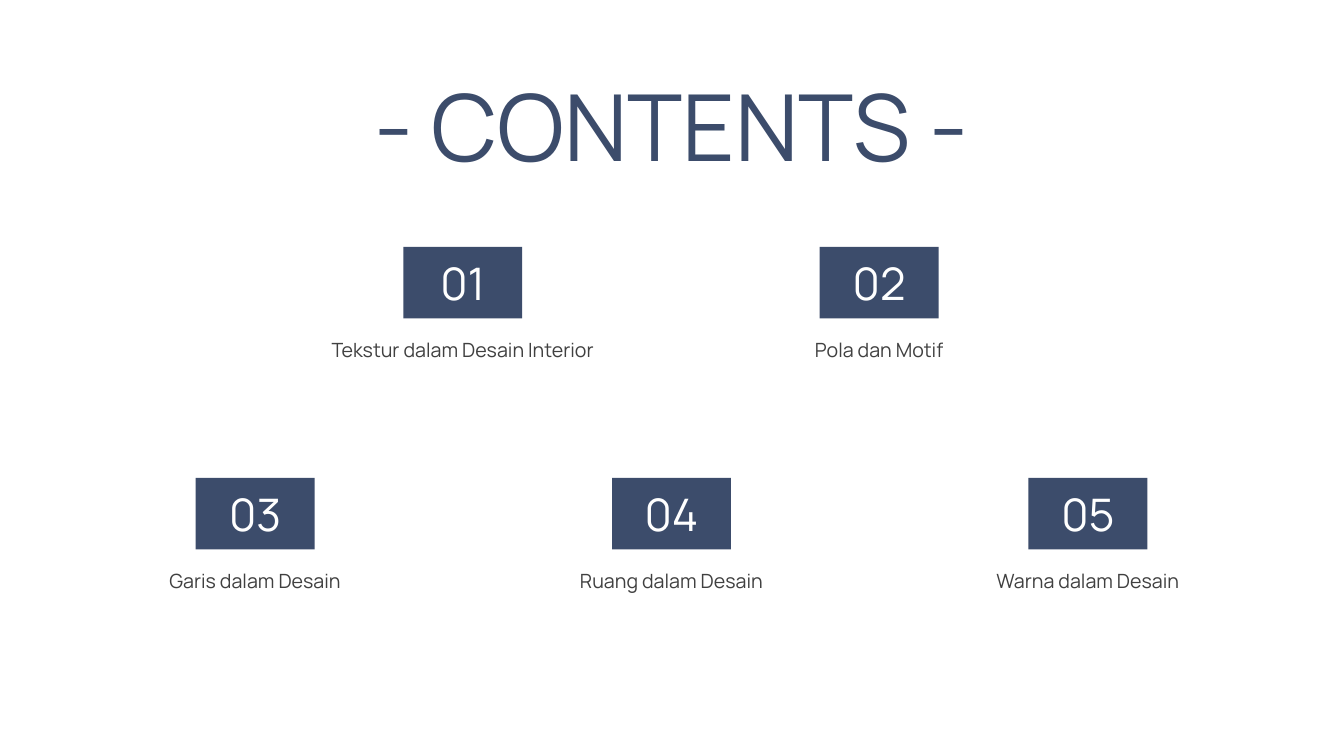
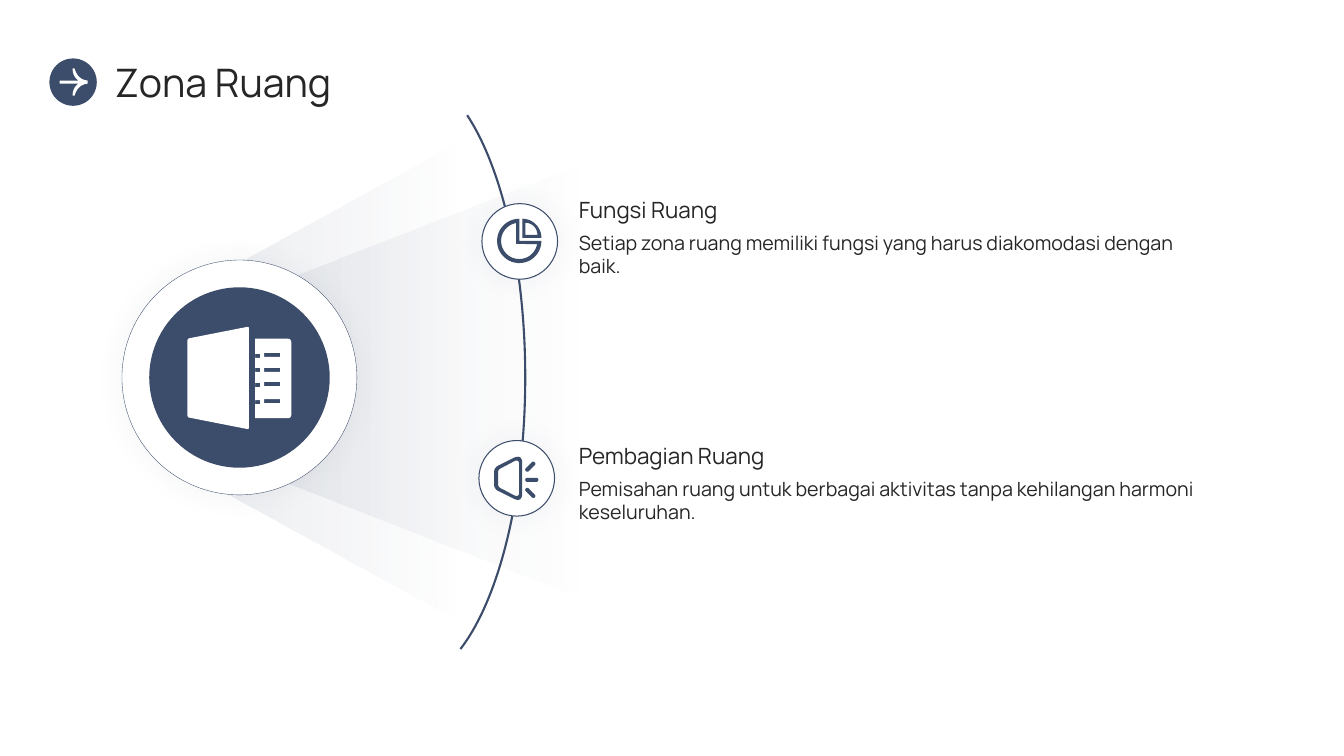
from dataclasses import dataclass
from itertools import count
from math import atan2, cos, degrees, dist, radians, sin

from pptx import Presentation
from pptx.dml.color import RGBColor
from pptx.enum.shapes import MSO_SHAPE as Preset
from pptx.enum.text import MSO_ANCHOR as Anchor, MSO_AUTO_SIZE as AutoSize, PP_ALIGN as Align
from pptx.oxml import parse_xml
from pptx.oxml.ns import nsdecls, qn
from pptx.shapes.autoshape import Shape
from pptx.slide import Slide
from pptx.util import Emu, Pt

EMU_PER_PX = 9144  # 100 px to the inch
FONT = "Manrope"
NAVY, WHITE, INK, GREY = "3C4C6B", "FFFFFF", "262626", "404040"
TITLE_ONLY = 5

Point = tuple[float, float]
Contour = list[Point]


@dataclass(frozen=True)
class Box:
    left: int
    top: int
    width: int
    height: int

    def emu(self) -> tuple[Emu, Emu, Emu, Emu]:
        return px(self.left), px(self.top), px(self.width), px(self.height)


@dataclass(frozen=True)
class TextStyle:
    size: int
    color: str
    align: Align = Align.LEFT
    anchor: Anchor = Anchor.TOP


@dataclass(frozen=True)
class Beam:
    box: Box
    inset: float


@dataclass(frozen=True)
class Zone:
    heading: str
    description: str
    top: int
    node: Box
    icon: list[Contour]


CONTENTS_TITLE = TextStyle(66, NAVY, Align.CENTER)
ZONE_TITLE = TextStyle(28, INK, anchor=Anchor.MIDDLE)
NUMBER = TextStyle(32, WHITE, Align.CENTER, Anchor.MIDDLE)
LABEL = TextStyle(14, GREY, Align.CENTER)
HEADING = TextStyle(16, INK, anchor=Anchor.BOTTOM)
DESCRIPTION = TextStyle(14, INK)


def px(length: float) -> Emu:
    return Emu(round(length * EMU_PER_PX))


def rgb(color: str) -> RGBColor:
    return RGBColor.from_string(color)


# Text and shapes

def write(shape: Shape, text: str, style: TextStyle) -> None:
    frame = shape.text_frame
    frame.text = text
    frame.word_wrap = True
    frame.auto_size = AutoSize.NONE
    frame.vertical_anchor = style.anchor
    frame.margin_left = frame.margin_right = frame.margin_top = frame.margin_bottom = 0
    paragraph = frame.paragraphs[0]
    paragraph.alignment = style.align
    font = paragraph.runs[0].font
    font.name, font.size, font.color.rgb = FONT, Pt(style.size), rgb(style.color)


def add_text(slide: Slide, box: Box, text: str, style: TextStyle) -> None:
    write(slide.shapes.add_textbox(*box.emu()), text, style)


def add_titled_slide(presentation: Presentation, box: Box, text: str, style: TextStyle) -> Slide:
    slide = presentation.slides.add_slide(presentation.slide_layouts[TITLE_ONLY])
    title = slide.shapes.title
    title.left, title.top, title.width, title.height = box.emu()
    write(title, text, style)
    return slide


def paint(shape: Shape, fill: str | None, line: str | None = None, weight: float = 0) -> None:
    shape.shadow.inherit = False
    if fill:
        shape.fill.solid()
        shape.fill.fore_color.rgb = rgb(fill)
    else:
        shape.fill.background()
    if line:
        shape.line.color.rgb = rgb(line)
        shape.line.width = Pt(weight)
    else:
        shape.line.fill.background()


def add_preset(slide: Slide, preset: Preset, box: Box, fill: str | None,
               line: str | None = None, weight: float = 0) -> Shape:
    shape = slide.shapes.add_shape(preset, *box.emu())
    paint(shape, fill, line, weight)
    return shape


def add_glowing_circle(slide: Slide, box: Box, weight: float) -> None:
    circle = add_preset(slide, Preset.OVAL, box, WHITE, NAVY, weight)
    circle.element.spPr.find(qn("a:effectLst")).append(parse_xml(
        f'<a:outerShdw {nsdecls("a")} blurRad="{Pt(20)}" dist="0" algn="ctr" rotWithShape="0">'
        f'<a:srgbClr val="{NAVY}"><a:alpha val="5000"/></a:srgbClr></a:outerShdw>'))


def add_beam(slide: Slide, beam: Beam) -> None:
    """Draw a light cone that fades out to the right."""
    shape = add_preset(slide, Preset.TRAPEZOID, beam.box, None)
    shape.rotation = 270
    shape.adjustments[0] = beam.inset
    stops = "".join(
        f'<a:gs pos="{position}"><a:srgbClr val="{NAVY}"><a:alpha val="{alpha}"/></a:srgbClr></a:gs>'
        for position, alpha in ((0, 10000), (100000, 0)))
    properties = shape.element.spPr
    properties.replace(properties.find(qn("a:noFill")), parse_xml(
        f'<a:gradFill {nsdecls("a")} rotWithShape="1"><a:gsLst>{stops}</a:gsLst>'
        '<a:lin ang="5400000" scaled="0"/></a:gradFill>'))


def add_icon(slide: Slide, contours: list[Contour], color: str) -> None:
    first, *others = [[(px(x), px(y)) for x, y in contour] for contour in contours]
    builder = slide.shapes.build_freeform(*first[0])
    builder.add_line_segments(first[1:])
    for contour in others:
        builder.move_to(*contour[0])
        builder.add_line_segments(contour[1:])
    paint(builder.convert_to_shape(), color)


# Outlines of the icons

def arc(center: Point, radius: float, start: float, end: float, steps: int = 32) -> Contour:
    """Sample a circle clockwise, in degrees from the right."""
    angles = [radians(start + (end - start) * step / steps) for step in range(steps + 1)]
    return [(center[0] + radius * cos(angle), center[1] + radius * sin(angle)) for angle in angles]


def curve(start: Point, control: Point, end: Point, steps: int = 12) -> Contour:
    """Sample a quadratic Bézier curve."""
    def at(t: float, axis: int) -> float:
        return (1 - t) ** 2 * start[axis] + 2 * t * (1 - t) * control[axis] + t * t * end[axis]
    return [(at(step / steps, 0), at(step / steps, 1)) for step in range(steps + 1)]


def rounded(corners: Contour, trims: list[int]) -> Contour:
    """Round each corner, starting the bend at its trim distance."""
    def toward(corner: Point, target: Point, trim: int) -> Point:
        share = trim / dist(corner, target)
        return tuple(a + (b - a) * share for a, b in zip(corner, target))

    outline = []
    for index, (corner, trim) in enumerate(zip(corners, trims)):
        before, after = corners[index - 1], corners[(index + 1) % len(corners)]
        outline += curve(toward(corner, before, trim), corner, toward(corner, after, trim))
    return closed(outline)


def closed(outline: Contour) -> Contour:
    return outline + outline[:1]


def rectangle(left: int, top: int, width: int, height: int) -> Contour:
    right, bottom = left + width, top + height
    return closed([(left, top), (right, top), (right, bottom), (left, bottom)])


def capsule(start: Point, end: Point, radius: int = 2) -> Contour:
    angle = degrees(atan2(end[1] - start[1], end[0] - start[0]))
    return closed(arc(start, radius, angle + 90, angle + 270) + arc(end, radius, angle - 90, angle + 90))


def wedge(corner: Point, center: Point, radius: int, start: float, end: float) -> Contour:
    return closed([corner] + arc(center, radius, start, end))


PIE_ICON = [
    wedge((515, 239), (515, 239), 22, 0, 270),
    wedge((512, 242), (515, 239), 18, 10, 260),
    wedge((518, 236), (518, 236), 19, 270, 360),
    wedge((521, 233), (521, 233), 12, 270, 360),
]
LAMP_ICON = [
    rounded([(490, 464), (518, 450), (518, 499), (490, 485)], [5, 10, 10, 5]),
    rounded([(494, 466), (515, 455), (515, 494), (494, 483)], [3, 6, 6, 3]),
    capsule((523, 466), (529, 460)),
    capsule((523, 476), (532, 476)),
    capsule((523, 486), (529, 492)),
]
RULER_ICON = [
    rounded([(186, 336), (247, 324), (247, 426), (186, 414)], [2] * 4),
    rounded([(253, 336), (289, 336), (289, 415), (253, 415)], [0, 4, 4, 0]),
    *(rectangle(262, top, 16, 4) for top in (350, 365, 379, 396)),
    *(rectangle(253, top, 5, 4) for top in (351, 365, 380, 397)),
]
ARROW_ICON = [closed(
    curve((74, 68), (77, 79), (87, 80))
    + curve((87, 83), (77, 84), (74, 95))
    + curve((72, 95), (72, 87), (78, 83))
    + [(59, 83), (59, 80)]
    + curve((78, 80), (72, 76), (72, 68)))]

CONTENTS = [
    ["Tekstur dalam Desain Interior", "Pola dan Motif"],
    ["Garis dalam Desain", "Ruang dalam Desain", "Warna dalam Desain"],
]
BEAMS = [Beam(Box(103, 259, 488, 239), 0.55), Beam(Box(189, 193, 446, 370), 0.39)]
ZONES = [
    Zone("Fungsi Ruang", "Setiap zona ruang memiliki fungsi yang harus diakomodasi dengan baik.",
         187, Box(478, 202, 75, 75), PIE_ICON),
    Zone("Pembagian Ruang",
         "Pemisahan ruang untuk berbagai aktivitas tanpa kehilangan harmoni keseluruhan.",
         431, Box(475, 437, 75, 75), LAMP_ICON),
]


def build_contents(presentation: Presentation) -> None:
    slide = add_titled_slide(presentation, Box(260, 69, 812, 114), "- CONTENTS -", CONTENTS_TITLE)
    center, column_pitch, row_pitch = 666, 413, 229
    numbers = count(1)
    for row, labels in enumerate(CONTENTS):
        top = 245 + row * row_pitch
        for column, label in enumerate(labels):
            middle = center + (2 * column - len(labels) + 1) * column_pitch // 2
            badge = add_preset(slide, Preset.RECTANGLE, Box(middle - 59, top, 118, 71), NAVY)
            write(badge, f"{next(numbers):02}", NUMBER)
            add_text(slide, Box(middle - 189, top + 90, 378, 118), label, LABEL)


def build_zones(presentation: Presentation) -> None:
    slide = add_titled_slide(presentation, Box(114, 58, 1145, 47), "Zona Ruang", ZONE_TITLE)
    for beam in BEAMS:
        add_beam(slide, beam)
    add_glowing_circle(slide, Box(121, 258, 233, 233), 0.25)
    add_preset(slide, Preset.OVAL, Box(148, 285, 179, 179), NAVY)
    add_icon(slide, RULER_ICON, WHITE)

    orbit = add_preset(slide, Preset.ARC, Box(288, 73, 233, 603), None, NAVY, 1.5)
    for index, angle in enumerate((282.75, 79.03)):
        orbit.adjustments[index] = angle * 60000 / 100000

    for zone in ZONES:
        add_glowing_circle(slide, zone.node, 0.75)
        add_icon(slide, zone.icon, NAVY)
        add_text(slide, Box(574, zone.top, 615, 34), zone.heading, HEADING)
        add_text(slide, Box(574, zone.top + 42, 615, 120), zone.description, DESCRIPTION)

    add_preset(slide, Preset.OVAL, Box(49, 58, 47, 47), NAVY)
    add_icon(slide, ARROW_ICON, WHITE)


def main() -> None:
    presentation = Presentation()
    presentation.slide_width, presentation.slide_height = px(1333), px(750)
    build_contents(presentation)
    build_zones(presentation)
    presentation.save("out.pptx")


if __name__ == "__main__":
    main()
